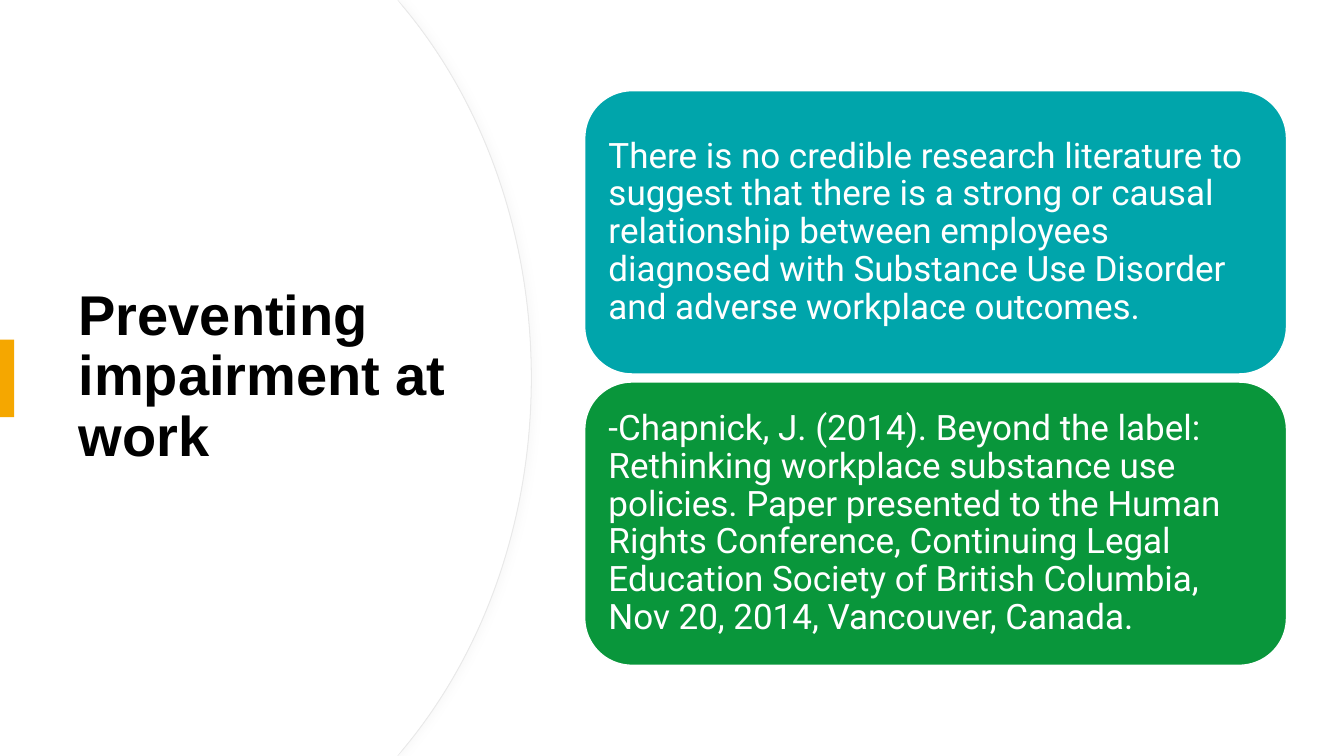
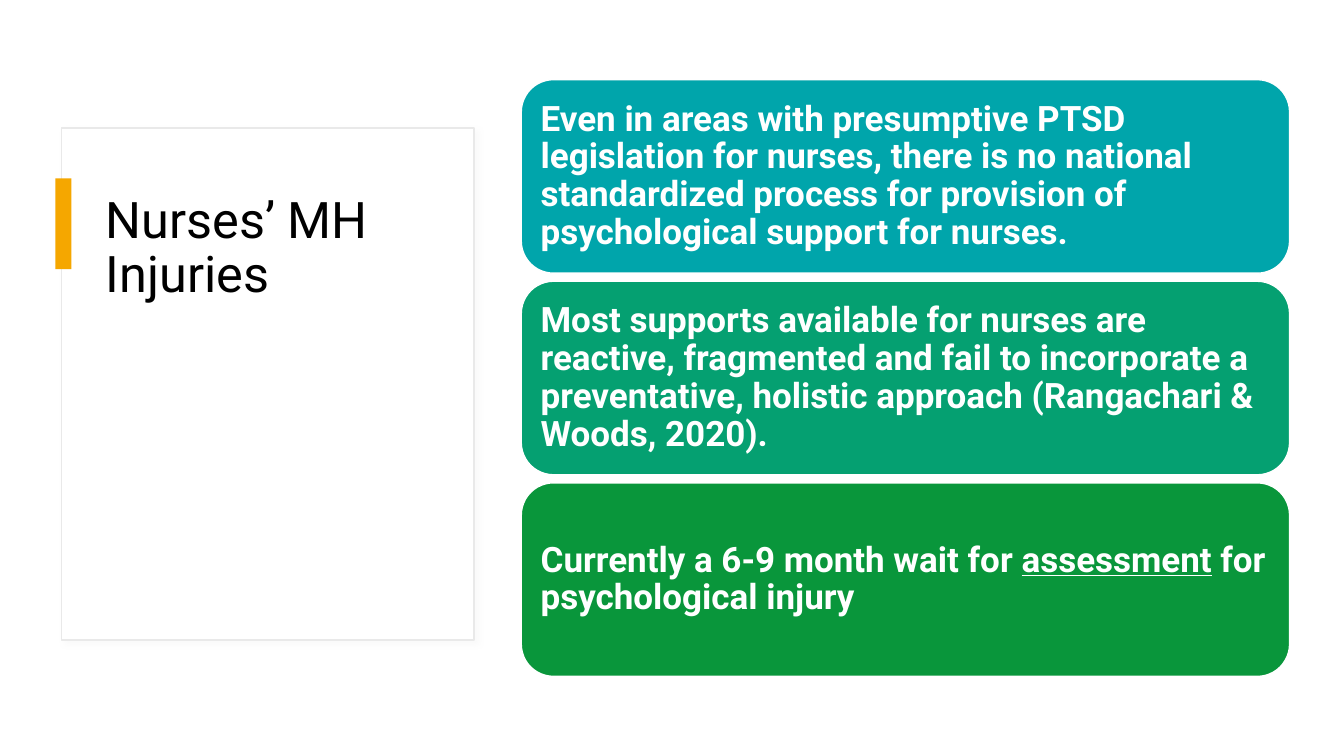
from lxml.etree import SubElement
from pptx import Presentation
from pptx.dml.color import RGBColor
from pptx.enum.shapes import MSO_SHAPE as Preset
from pptx.enum.text import MSO_ANCHOR as Anchor, MSO_AUTO_SIZE as AutoSize, PP_ALIGN as Align
from pptx.oxml.ns import qn
from pptx.util import Pt

PX = 9144  # EMU, 100 px to the inch
WIDTH, HEIGHT = 1333, 750
WHITE, BLACK, EDGE, SHADOW, ACCENT = "FFFFFF", "000000", "E9E9E9", "D9D9D9", "F5A700"
TEAL, SEA_GREEN, GREEN = "00A5AB", "05A071", "09963B"
CARD_GAP = 8

PREVENTING = {
    "title": "Preventing impairment at work",
    "title_box": (68, 127, 394, 495),
    "title_format": dict(font="Arial", size=40, bold=True, anchor=Anchor.MIDDLE),
    "accent_box": (0, 337, 14, 77),
    "cards_box": (580, 90, 696, 570),
    "cards_bold": False,
    "cards": [
        (TEAL, ["There is no credible research literature to suggest that there is a strong or "
                "causal relationship between employees diagnosed with Substance Use Disorder and "
                "adverse workplace outcomes."]),
        (GREEN, ["-Chapnick, J. (2014). Beyond the label: Rethinking workplace substance use "
                 "policies. Paper presented to the Human Rights Conference, Continuing Legal "
                 "Education Society of British Columbia, Nov 20, 2014, Vancouver, Canada."]),
    ],
}
INJURIES = {
    "title": "Nurses’ MH Injuries",
    "title_box": (95, 188, 339, 385),
    "title_format": dict(font="Roboto", size=36, anchor=Anchor.TOP),
    "accent_box": (55, 177, 16, 90),
    "cards_box": (517, 79, 762, 592),
    "cards_bold": True,
    "cards": [
        (TEAL, ["Even in areas with presumptive PTSD legislation for nurses, there is no national "
                "standardized process for provision of psychological support for nurses."]),
        (SEA_GREEN, ["Most supports available for nurses are reactive, fragmented and fail to "
                     "incorporate a preventative, holistic approach (Rangachari & Woods, 2020)."]),
        # every second part is underlined
        (GREEN, ["Currently a 6-9 month wait for ", "assessment", " for psychological injury"]),
    ],
}


def px(*lengths):
    return [round(length * PX) for length in lengths]


def rgb(color):
    return RGBColor.from_string(color)


def style(shape, fill, line=None, line_width=1):
    shape.shadow.inherit = False
    shape.fill.solid()
    shape.fill.fore_color.rgb = rgb(fill)
    if line:
        shape.line.color.rgb = rgb(line)
        shape.line.width = Pt(line_width)
    else:
        shape.line.fill.background()
    return shape


def add_box(slide, preset, box, fill, line=None):
    return style(slide.shapes.add_shape(preset, *px(*box)), fill, line)


def cast_shadow(shape, degrees):
    effects = shape.element.spPr.find(qn("a:effectLst"))
    shadow = SubElement(effects, qn("a:outerShdw"), blurRad=str(Pt(4)), dist=str(Pt(3)),
                        dir=str(degrees * 60000), algn="tl", rotWithShape="0")
    color = SubElement(shadow, qn("a:srgbClr"), val=SHADOW)
    SubElement(color, qn("a:alpha"), val="12000")


def write(shape, parts, *, size, font="Roboto", color=WHITE, bold=False, anchor=Anchor.MIDDLE,
          margin_y=10):
    """Write one paragraph whose odd-numbered parts are underlined."""
    frame = shape.text_frame
    frame.word_wrap = True
    frame.auto_size = AutoSize.NONE
    frame.vertical_anchor = anchor
    frame.margin_left, frame.margin_right = px(10, 10)
    frame.margin_top, frame.margin_bottom = px(margin_y, margin_y)
    paragraph = frame.paragraphs[0]
    paragraph.alignment = Align.LEFT
    paragraph.line_spacing = 0.9
    for index, part in enumerate(parts):
        run = paragraph.add_run()
        run.text = part
        run.font.name, run.font.size, run.font.bold = font, Pt(size), bold
        run.font.underline = index % 2 == 1
        run.font.color.rgb = rgb(color)


def bend_segments(shape, first):
    """Turn three straight segments, from number first on, into one cubic curve."""
    outline = next(shape.element.iter(qn("a:path")))
    segments = list(outline)[first:first + 3]
    curve = SubElement(outline, qn("a:cubicBezTo"))
    segments[0].addprevious(curve)
    for segment in segments:
        curve.append(segment[0])
        outline.remove(segment)


def add_arc_panel(slide, right):
    shoulder, bend = right - 126, right - 48
    upper = [(394, 0), (shoulder, 8), (bend, 102), (right, 232)]
    lower = [(x, HEIGHT - y) for x, y in reversed(upper)]
    points = [*upper, (right, HEIGHT / 2), *lower, (0, HEIGHT)]
    builder = slide.shapes.build_freeform(0, 0)
    builder.add_line_segments([px(*point) for point in points], close=True)
    panel = builder.convert_to_shape()
    for first in (6, 3):
        bend_segments(panel, first)
    return panel


def add_curved_panel(slide):
    cast_shadow(style(add_arc_panel(slide, 527), WHITE, EDGE, 0.75), 0)
    style(add_arc_panel(slide, 526), WHITE)


def add_square_panel(slide):
    cast_shadow(add_box(slide, Preset.RECTANGLE, (61, 127, 409, 508), WHITE, EDGE), 45)


def add_title(slide, content):
    title = slide.shapes.title
    title.left, title.top, title.width, title.height = px(*content["title_box"])
    write(title, [content["title"]], color=BLACK, margin_y=5, **content["title_format"])
    slide.shapes[-1].element.addnext(title.element)  # in front of the panel


def add_cards(slide, content):
    left, top, width, height = content["cards_box"]
    cards = content["cards"]
    card_height = (height - CARD_GAP * (len(cards) - 1)) / len(cards)
    for row, (fill, parts) in enumerate(cards):
        box = (left, top + row * (card_height + CARD_GAP), width, card_height)
        card = add_box(slide, Preset.ROUNDED_RECTANGLE, box, fill, WHITE)
        write(card, parts, size=25, bold=content["cards_bold"])


def add_slide(presentation, content, add_panel):
    slide = presentation.slides.add_slide(presentation.slide_layouts[5])
    add_box(slide, Preset.RECTANGLE, (0, 0, WIDTH, HEIGHT), WHITE)
    add_panel(slide)
    add_title(slide, content)
    add_box(slide, Preset.RECTANGLE, content["accent_box"], ACCENT)
    add_cards(slide, content)


def main():
    presentation = Presentation()
    presentation.slide_width, presentation.slide_height = px(WIDTH, HEIGHT)
    add_slide(presentation, PREVENTING, add_curved_panel)
    add_slide(presentation, INJURIES, add_square_panel)
    presentation.save("out.pptx")


if __name__ == "__main__":
    main()
